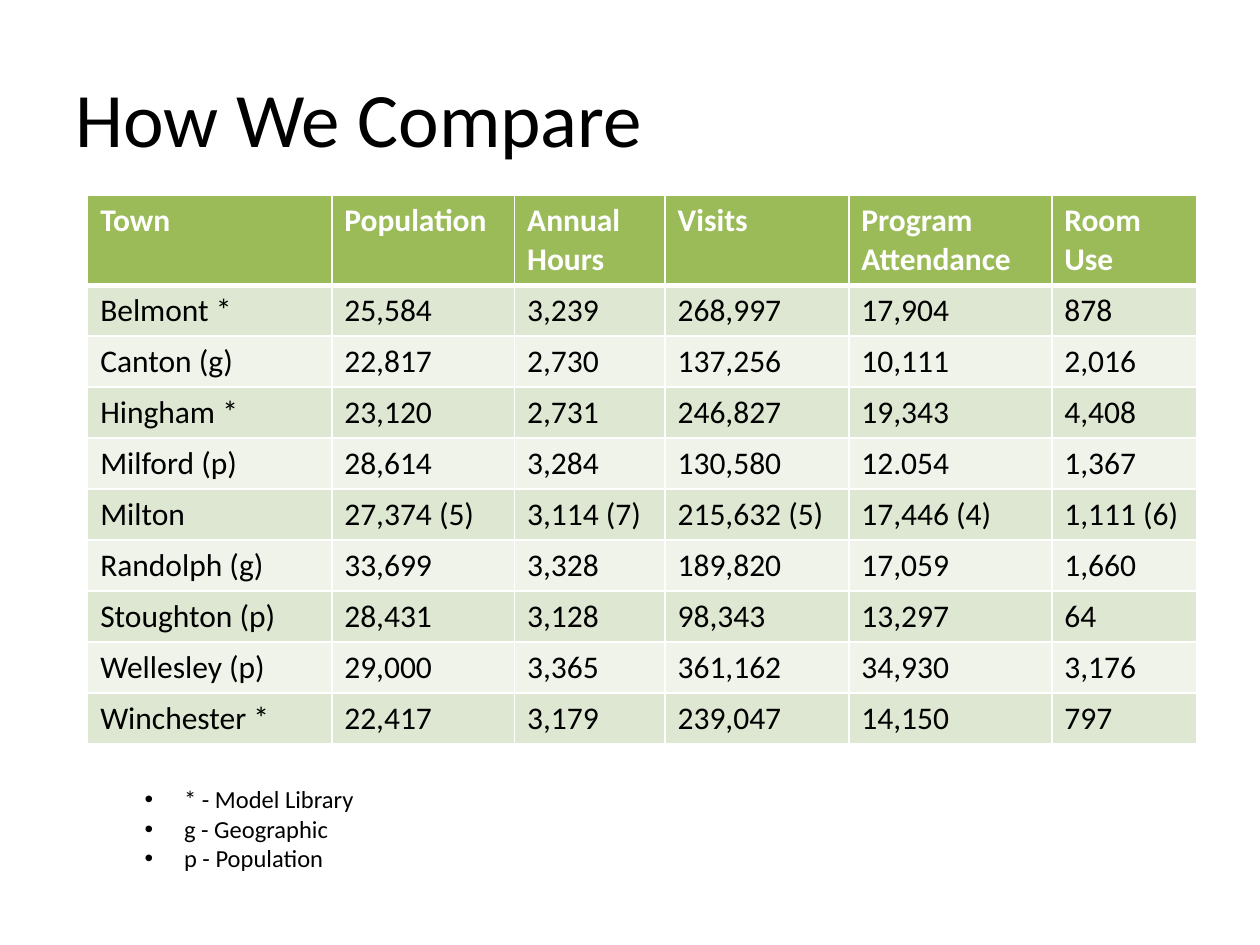
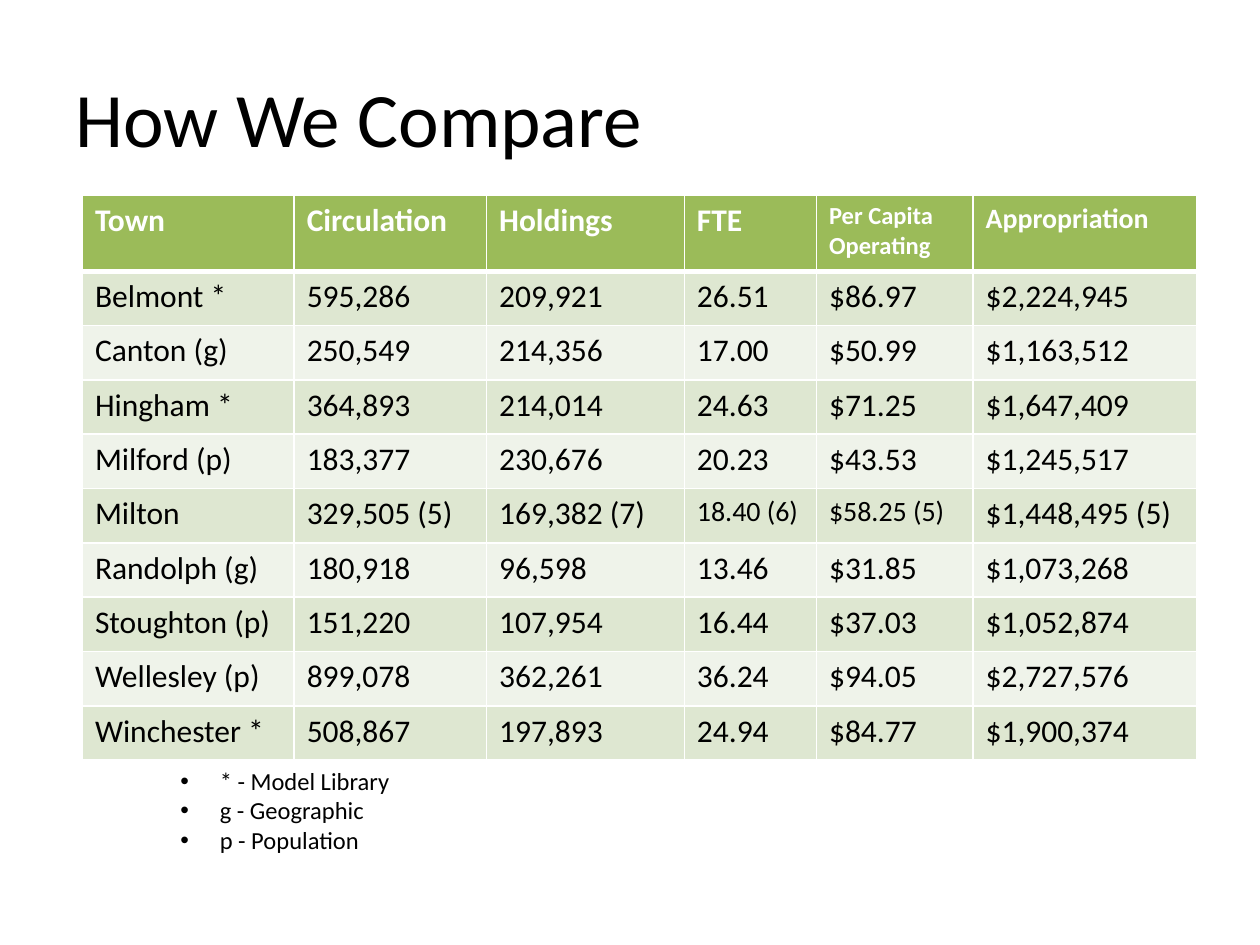
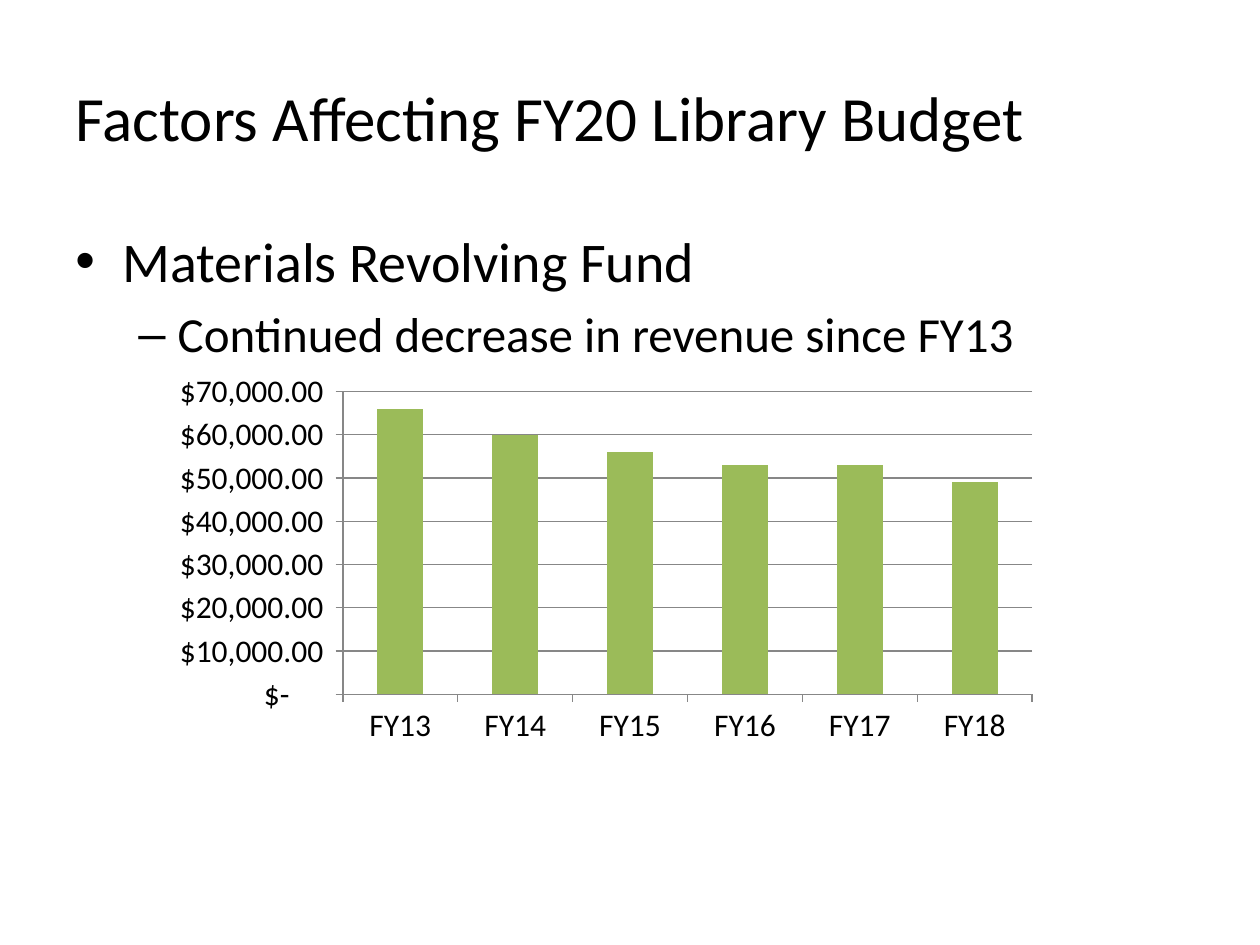
from lxml import etree
from pptx import Presentation
from pptx import util as u
from pptx.chart import data as chart_data
from pptx.dml.color import RGBColor
from pptx.enum import chart as chart_enums, text
from pptx.oxml import ns

Pt = u.Pt
FONT = "Calibri"
BLACK = RGBColor(0, 0, 0)
WHITE = RGBColor(255, 255, 255)
GREEN = RGBColor(0x9B, 0xBB, 0x59)
BAND_DARK = RGBColor(0xDE, 0xE7, 0xD1)
BAND_LIGHT = RGBColor(0xEF, 0xF3, 0xEA)
AXIS_GRAY = RGBColor(0x87, 0x87, 0x87)

TITLE_BOX = (36, 21.6, 648, 90)
TABLE_TOP = 111.6
LEGEND = ["* - Model Library", "g - Geographic", "p - Population"]
TOWNS = ["Belmont *", "Canton (g)", "Hingham *", "Milford (p)", "Milton",
         "Randolph (g)", "Stoughton (p)", "Wellesley (p)", "Winchester *"]

COMPARISONS = [
    {
        "left": 50.1, "widths": [139.5, 104.5, 86, 105, 116, 82.8],
        "header_height": 51.4, "row_height": 29.15, "legend_at": (75.6, 444.7),
        "columns": {
            "Population": ["25,584", "22,817", "23,120", "28,614", "27,374 (5)",
                           "33,699", "28,431", "29,000", "22,417"],
            "Annual Hours": ["3,239", "2,730", "2,731", "3,284", "3,114 (7)",
                             "3,328", "3,128", "3,365", "3,179"],
            "Visits": ["268,997", "137,256", "246,827", "130,580", "215,632 (5)",
                       "189,820", "98,343", "361,162", "239,047"],
            "Program Attendance": ["17,904", "10,111", "19,343", "12.054", "17,446 (4)",
                                   "17,059", "13,297", "34,930", "14,150"],
            "Room Use": ["878", "2,016", "4,408", "1,367", "1,111 (6)",
                         "1,660", "64", "3,176", "797"],
        },
        "small_text": {},
    },
    {
        "left": 47.1, "widths": [121, 110, 113, 75.5, 89.5, 127.8],
        "header_height": 43.4, "row_height": 31.05, "legend_at": (96, 434.2),
        "columns": {
            "Circulation": ["595,286", "250,549", "364,893", "183,377", "329,505 (5)",
                            "180,918", "151,220", "899,078", "508,867"],
            "Holdings": ["209,921", "214,356", "214,014", "230,676", "169,382 (7)",
                         "96,598", "107,954", "362,261", "197,893"],
            "FTE": ["26.51", "17.00", "24.63", "20.23", "18.40 (6)",
                    "13.46", "16.44", "36.24", "24.94"],
            "Per Capita Operating": ["$86.97", "$50.99", "$71.25", "$43.53", "$58.25 (5)",
                                     "$31.85", "$37.03", "$94.05", "$84.77"],
            "Appropriation": ["$2,224,945", "$1,163,512", "$1,647,409", "$1,245,517",
                              "$1,448,495 (5)", "$1,073,268", "$1,052,874",
                              "$2,727,576", "$1,900,374"],
        },
        "small_text": {"Per Capita Operating": 14, "Appropriation": 16,
                       "18.40 (6)": 16, "$58.25 (5)": 16},
    },
]


def add_text(slide, box, lines, anchor=text.MSO_ANCHOR.TOP):
    """Each line is (words, size, bullet, left margin, hanging indent, space before)."""
    frame = slide.shapes.add_textbox(*map(Pt, box)).text_frame
    frame.word_wrap = True
    frame.vertical_anchor = anchor
    for index, (words, size, bullet, margin, hanging, space) in enumerate(lines):
        paragraph = frame.add_paragraph() if index else frame.paragraphs[0]
        paragraph.space_before = Pt(space)
        add_run(paragraph, words, size)
        if bullet:
            properties = paragraph._p.get_or_add_pPr()
            properties.set("marL", str(Pt(margin)))
            properties.set("indent", str(-Pt(hanging)))
            etree.SubElement(properties, ns.qn("a:buFont"), typeface="Arial")
            etree.SubElement(properties, ns.qn("a:buChar"), char=bullet)


def add_run(paragraph, words, size, color=BLACK, bold=False):
    run = paragraph.add_run()
    run.text = words
    run.font.name = FONT
    run.font.size = Pt(size)
    run.font.bold = bold
    run.font.color.rgb = color


presentation = Presentation()
presentation.slide_width = Pt(720)
presentation.slide_height = Pt(540)
blank = presentation.slide_layouts[6]

# Titles
slides = []
for title, size in [("How We Compare", 44), ("How We Compare", 44),
                    ("Factors Affecting FY20 Library Budget", 36)]:
    slide = presentation.slides.add_slide(blank)
    add_text(slide, TITLE_BOX, [(title, size, None, 0, 0, 0)], text.MSO_ANCHOR.MIDDLE)
    slides.append(slide)

# Town comparison tables
for slide, comparison in zip(slides, COMPARISONS):
    columns = {"Town": TOWNS, **comparison["columns"]}
    rows = [list(columns), *zip(*columns.values())]
    heights = [comparison["header_height"]] + [comparison["row_height"]] * len(TOWNS)
    widths = comparison["widths"]
    table = slide.shapes.add_table(
        len(rows), len(widths), Pt(comparison["left"]), Pt(TABLE_TOP),
        Pt(sum(widths)), Pt(sum(heights))).table
    for column, width in zip(table.columns, widths):
        column.width = Pt(width)
    for row_index, (row, height) in enumerate(zip(rows, heights)):
        table.rows[row_index].height = Pt(height)
        is_header = row_index == 0
        fill = GREEN if is_header else BAND_DARK if row_index % 2 else BAND_LIGHT
        borders = {"lnL": 1, "lnR": 1, "lnT": 3 if row_index == 1 else 1,
                   "lnB": 3 if is_header else 1}
        for column_index, words in enumerate(row):
            cell = table.cell(row_index, column_index)
            for side, weight in borders.items():
                line = etree.SubElement(cell._tc.get_or_add_tcPr(), ns.qn("a:" + side),
                                        w=str(Pt(weight)))
                line_fill = etree.SubElement(line, ns.qn("a:solidFill"))
                etree.SubElement(line_fill, ns.qn("a:srgbClr"), val=str(WHITE))
            cell.fill.solid()
            cell.fill.fore_color.rgb = fill
            add_run(cell.text_frame.paragraphs[0], words,
                    comparison["small_text"].get(words, 18),
                    WHITE if is_header else BLACK, is_header)
    add_text(slide, (*comparison["legend_at"], 494, 58.3),
             [(words, 14, "•", 22.5, 22.5, 0) for words in LEGEND])

# Revolving fund revenue
budget_slide = slides[2]
add_text(budget_slide, (36, 126, 648, 356.4), [
    ("Materials Revolving Fund", 32, "•", 27, 27, 6.4),
    ("Continued decrease in revenue since FY13", 28, "–", 58.5, 22.5, 5.6),
])
revenue = chart_data.CategoryChartData()
revenue.categories = [f"FY{year}" for year in range(13, 19)]
revenue.add_series("Series 1", [66000, 60000, 56000, 53000, 53000, 49000])
chart = budget_slide.shapes.add_chart(
    chart_enums.XL_CHART_TYPE.COLUMN_CLUSTERED,
    Pt(88.5), Pt(208.3), Pt(511.5), Pt(221.8), revenue).chart
chart.has_legend = False
chart.has_title = False
chart.font.name = FONT
chart.font.size = Pt(18)
chart.font.color.rgb = BLACK
plot = chart.plots[0]
plot.gap_width = 150
plot.vary_by_categories = False
bars = plot.series[0].format.fill
bars.solid()
bars.fore_color.rgb = GREEN

value_axis = chart.value_axis
value_axis.minimum_scale = 0
value_axis.maximum_scale = 70000
value_axis.major_unit = 10000
value_axis.tick_labels.number_format = (
    r'_("$"* #,##0.00_);_("$"* \(#,##0.00\);_("$"* "-"??_);_(@_)')
value_axis.tick_labels.number_format_is_linked = False
for axis in (chart.category_axis, value_axis):
    axis.major_tick_mark = chart_enums.XL_TICK_MARK.OUTSIDE
for part in (chart.category_axis, value_axis, value_axis.major_gridlines):
    part.format.line.color.rgb = AXIS_GRAY
    part.format.line.width = Pt(0.75)

presentation.save("out.pptx")
